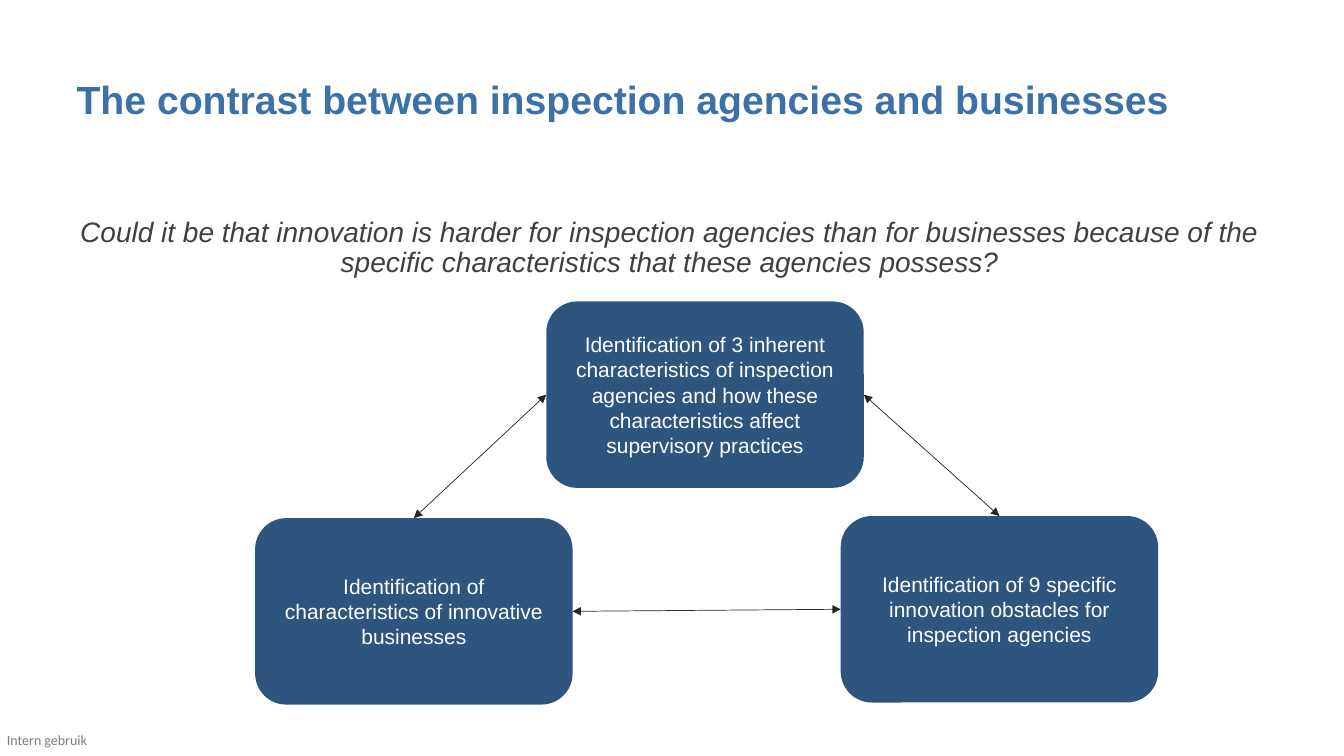
from lxml import etree
from pptx import Presentation
from pptx import util as u
from pptx.dml.color import RGBColor
from pptx.enum import shapes, text
from pptx.oxml.ns import qn

TOP, LEFT, RIGHT = 0, 1, 3  # connection sites of a rounded rectangle


def color(value):
    return RGBColor.from_string(value)


class SlideBuilder:
    font = "Arial"
    box_fill = "2D557E"
    box_size = (226.8, 133.2)
    line_color = "262626"

    def __init__(self, deck):
        self.slide = deck.slides.add_slide(deck.slide_layouts[6])

    def add_words(self, frame, words, size, ink, align, font=None, bold=False,
                  italic=False, spacing=1.0):
        """Put one styled run into the frame's first paragraph."""
        para = frame.paragraphs[0]
        para.alignment = align
        para.line_spacing = spacing
        span = para.add_run()
        span.text = words
        span.font.name = font or self.font
        span.font.size = u.Pt(size)
        span.font.bold = bold
        span.font.italic = italic
        span.font.color.rgb = color(ink)

    def label(self, words, left, top, width, height, size, ink,
              align=text.PP_ALIGN.LEFT, **style):
        box = self.slide.shapes.add_textbox(*map(u.Pt, (left, top, width, height)))
        frame = box.text_frame
        frame.word_wrap = True
        frame.margin_left = frame.margin_right = 0
        frame.margin_top = frame.margin_bottom = 0
        self.add_words(frame, words, size, ink, align, **style)

    def topic(self, words, left, top):
        box = self.slide.shapes.add_shape(
            shapes.MSO_SHAPE.ROUNDED_RECTANGLE,
            *map(u.Pt, (left, top, *self.box_size)))
        box.shadow.inherit = False
        box.fill.solid()
        box.fill.fore_color.rgb = color(self.box_fill)
        box.line.fill.background()
        frame = box.text_frame
        frame.word_wrap = True
        frame.vertical_anchor = text.MSO_ANCHOR.MIDDLE
        self.add_words(frame, words, 15, "FFFFFF", text.PP_ALIGN.CENTER)
        return box

    def double_arrow(self, start, start_site, end, end_site):
        arrow = self.slide.shapes.add_connector(
            shapes.MSO_CONNECTOR.STRAIGHT, 0, 0, 0, 0)
        arrow.begin_connect(start, start_site)
        arrow.end_connect(end, end_site)
        arrow.line.color.rgb = color(self.line_color)
        arrow.line.width = u.Pt(0.5)
        properties = arrow._element.spPr
        line = properties.find(qn("a:ln"))
        for tip in ("a:headEnd", "a:tailEnd"):
            etree.SubElement(line, qn(tip), type="triangle")
        etree.SubElement(properties, qn("a:effectLst"))


def main():
    deck = Presentation()
    deck.slide_width, deck.slide_height = u.Pt(960), u.Pt(540)
    page = SlideBuilder(deck)

    page.label("Intern gebruik", 5, 522.7, 60, 12.2, 10, "7F7F7F", font="Calibri")
    page.label("The contrast between inspection agencies and businesses",
               54.7, 57.6, 850.3, 28, 28, "3C71A8", bold=True, spacing=0.9)
    page.label("Could it be that innovation is harder for inspection agencies than "
               "for businesses because of the specific characteristics that these "
               "agencies possess?",
               54.7, 156, 847.4, 44, 20, "404040", text.PP_ALIGN.CENTER,
               italic=True, spacing=0.9)

    agencies = page.topic(
        "Identification of 3 inherent characteristics of inspection agencies and "
        "how these characteristics affect supervisory practices", 390.2, 215.3)
    businesses = page.topic(
        "Identification of characteristics of innovative businesses", 182.2, 370.1)
    obstacles = page.topic(
        "Identification of 9 specific innovation obstacles for inspection agencies",
        600.5, 368.6)

    page.double_arrow(agencies, LEFT, businesses, TOP)
    page.double_arrow(agencies, RIGHT, obstacles, TOP)
    page.double_arrow(businesses, RIGHT, obstacles, LEFT)

    deck.save("out.pptx")


if __name__ == "__main__":
    main()
